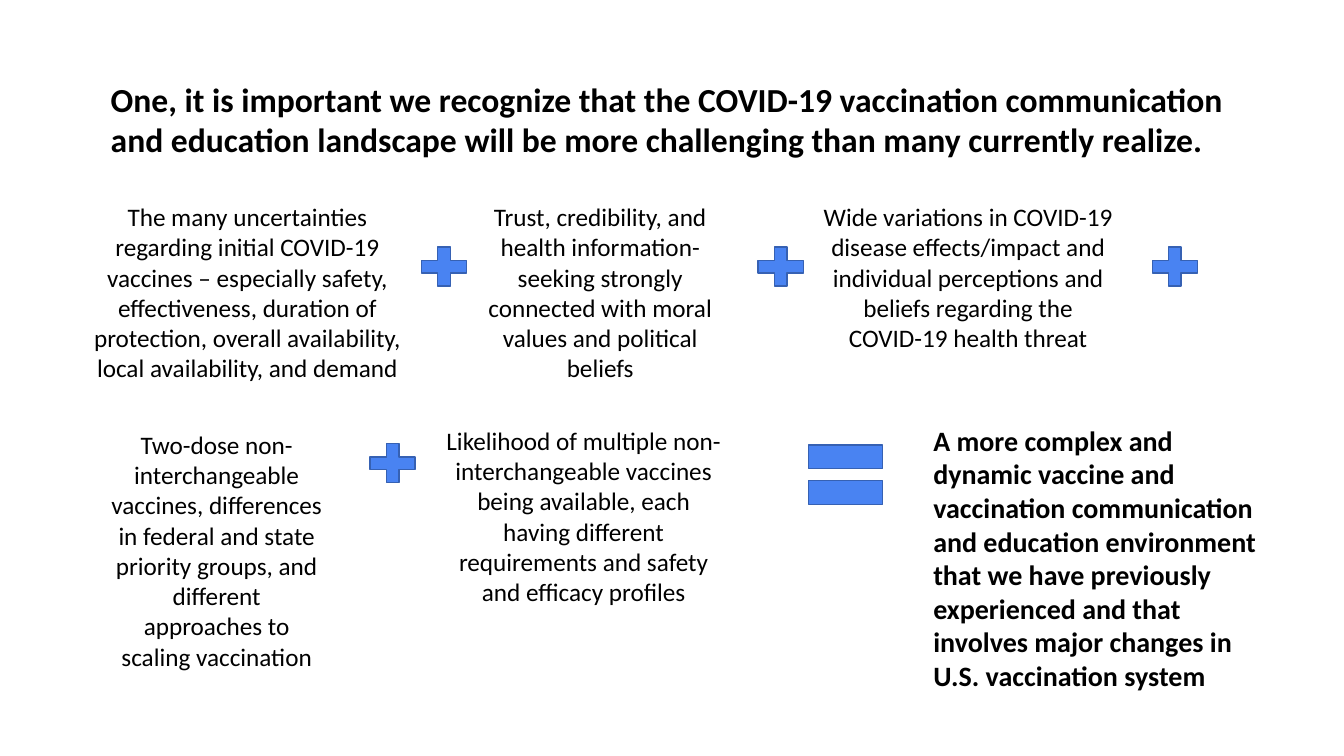
from pptx import Presentation
from pptx import util as u
from pptx.dml import color
from pptx.enum import shapes, text

presentation = Presentation()
presentation.slide_width = u.Inches(13.333)
presentation.slide_height = u.Inches(7.5)
slide = presentation.slides.add_slide(presentation.slide_layouts[6])
column = presentation.slide_width / 40
row = presentation.slide_height / 30


def rgb(value):
    return color.RGBColor.from_string(value)


def add_text(wording, left, top, width, height, size=18, bold=False,
             align=text.PP_ALIGN.CENTER):
    box = slide.shapes.add_textbox(int(left * column), int(top * row),
                                   int(width * column), int(height * row))
    frame = box.text_frame
    frame.word_wrap = True
    frame.auto_size = text.MSO_AUTO_SIZE.SHAPE_TO_FIT_TEXT
    paragraph = frame.paragraphs[0]
    paragraph.alignment = align
    run = paragraph.add_run()
    run.text = wording
    run.font.name = "Calibri"
    run.font.size = u.Pt(size)
    run.font.bold = bold
    run.font.color.rgb = rgb("000000")


add_text("One, it is important we recognize that the COVID-19 vaccination communication "
         "and education landscape will be more challenging than many currently realize.",
         3, 2.92, 34.2, 3.64, size=24, bold=True, align=text.PP_ALIGN.LEFT)

factors = [
    ("The many uncertainties regarding initial COVID-19 vaccines – especially safety, "
     "effectiveness, duration of protection, overall availability, local availability, "
     "and demand", 2.43, 7.8, 9.87, 7.68),
    ("Trust, credibility, and health information-seeking strongly connected with moral "
     "values and political beliefs", 14.13, 7.8, 7.47, 7.68),
    ("Wide variations in COVID-19 disease effects/impact and individual perceptions and "
     "beliefs regarding the COVID-19 health threat", 24.12, 7.8, 9.39, 6.48),
    ("Two-dose non-interchangeable vaccines, differences in federal and state priority "
     "groups, and different approaches to scaling vaccination", 3, 16.84, 6.9, 10.08),
    ("Likelihood of multiple non-interchangeable vaccines being available, each having "
     "different requirements and safety and efficacy profiles", 12.84, 16.68, 9.06, 7.68),
]
for wording, left, top, width, height in factors:
    add_text(wording, left, top, width, height)

add_text("A more complex and dynamic vaccine and vaccination communication and education "
         "environment that we have previously experienced and that involves major changes "
         "in U.S. vaccination system",
         27.48, 16.6, 10.65, 11.16, size=20, bold=True, align=text.PP_ALIGN.LEFT)

plus = (shapes.MSO_SHAPE.MATH_PLUS, 1.83, 2.12)
equal = (shapes.MSO_SHAPE.MATH_EQUAL, 3, 4)
operators = [
    (plus, 12.3, 9.52),
    (plus, 22.32, 9.52),
    (plus, 34.05, 9.52),
    (plus, 10.77, 17.32),
    (equal, 23.67, 16.84),
]
for (kind, width, height), left, top in operators:
    shape = slide.shapes.add_shape(kind, int(left * column), int(top * row),
                                   int(width * column), int(height * row))
    shape.shadow.inherit = False
    shape.fill.solid()
    shape.fill.fore_color.rgb = rgb("4983F2")
    shape.line.color.rgb = rgb("3661B3")
    shape.line.width = u.Pt(1)

presentation.save("out.pptx")
